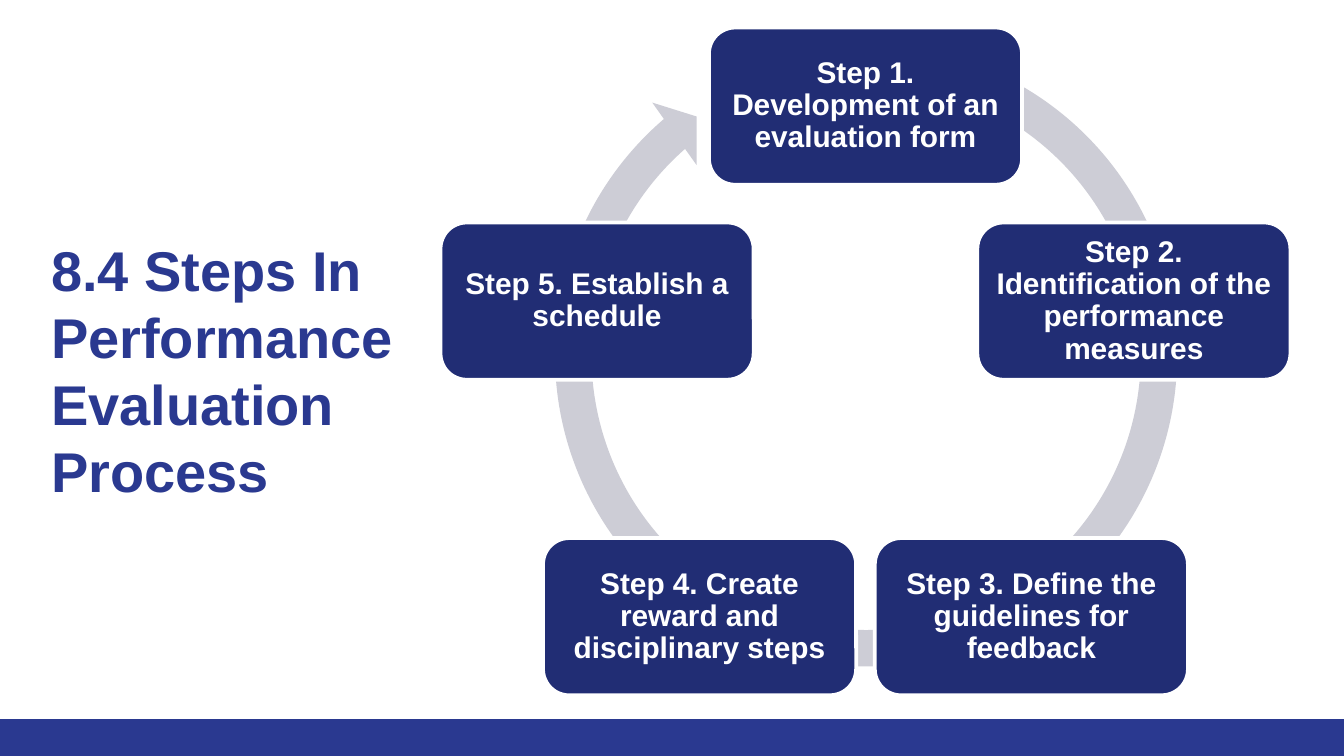
from dataclasses import dataclass
from math import cos, radians, sin

from pptx import Presentation
from pptx.dml.color import RGBColor
from pptx.enum.shapes import MSO_SHAPE
from pptx.enum.text import MSO_ANCHOR, MSO_AUTO_SIZE, PP_ALIGN
from pptx.util import Inches, Pt

BLUE, NAVY, GREY, WHITE = "2A3990", "212D74", "CDCDD6", "FFFFFF"
WIDE, HIGH = 10, 10 * 9 / 16
BAR_TOP = 5.35
MID_X, MID_Y, RADIUS = 6.44, 2.89, 2.1
BOX_W, BOX_H = 2.33, 1.17


@dataclass
class Step:
    """One box on the ring, placed by its turn in degrees from the top."""
    text: str
    turn: float


def hue(code: str) -> RGBColor:
    """Turn a hex string into a colour."""
    return RGBColor.from_string(code)


def write(shape, text: str, *, size: float, color: str, align, anchor, inset: float, space: float) -> None:
    """Put formatted bold text in a shape."""
    frame = shape.text_frame
    frame.word_wrap = True
    frame.auto_size = MSO_AUTO_SIZE.NONE
    frame.vertical_anchor = anchor
    frame.margin_left = frame.margin_right = Inches(inset)
    frame.margin_top = frame.margin_bottom = Inches(inset)
    para = frame.paragraphs[0]
    para.alignment, para.line_spacing = align, space
    run = para.add_run()
    run.text = text
    font = run.font
    font.name, font.size, font.bold = "Arial", Pt(size), True
    font.color.rgb = hue(color)


def draw(slide, kind, left: float, top: float, wide: float, high: float, fill: str):
    """Add a flat filled shape without an outline."""
    shape = slide.shapes.add_shape(kind, Inches(left), Inches(top), Inches(wide), Inches(high))
    shape.shadow.inherit = False
    shape.fill.solid()
    shape.fill.fore_color.rgb = hue(fill)
    shape.line.fill.background()
    return shape


def add_step(slide, step: Step) -> None:
    """Draw one step box on the ring."""
    turn = radians(step.turn)
    left = MID_X + RADIUS * sin(turn) - BOX_W / 2
    top = MID_Y - RADIUS * cos(turn) - BOX_H / 2
    box = draw(slide, MSO_SHAPE.ROUNDED_RECTANGLE, left, top, BOX_W, BOX_H, NAVY)
    box.line.color.rgb = hue(WHITE)
    box.line.width = Pt(2)
    write(box, step.text, size=16, color=WHITE, align=PP_ALIGN.CENTER,
          anchor=MSO_ANCHOR.MIDDLE, inset=0.07, space=0.9)


def add_title(slide, text: str) -> None:
    """Place and fill the title."""
    title = slide.shapes.title
    title.left, title.top = Inches(0.28), Inches(1.65)
    title.width, title.height = Inches(2.8), Inches(2.53)
    write(title, text, size=30, color=BLUE, align=PP_ALIGN.LEFT,
          anchor=MSO_ANCHOR.TOP, inset=0.1, space=1)


def add_ring(slide) -> None:
    """Draw the circular arrow behind the steps."""
    ring = draw(slide, MSO_SHAPE.CIRCULAR_ARROW, 3.98, 0.18, 4.93, 4.93, GREY)
    for spot, value in enumerate((0.055, 3.307, 137.48, 174.03, 0.058)):
        ring.adjustments[spot] = value


def main() -> None:
    """Build and save the slide."""
    deck = Presentation()
    deck.slide_width, deck.slide_height = Inches(WIDE), Inches(HIGH)
    slide = deck.slides.add_slide(deck.slide_layouts[5])
    draw(slide, MSO_SHAPE.RECTANGLE, 0, BAR_TOP, WIDE, HIGH - BAR_TOP, BLUE)
    add_title(slide, "8.4 Steps In Performance Evaluation Process")
    add_ring(slide)
    texts = (
        "Step 1. Development of an evaluation form",
        "Step 2. Identification of the performance measures",
        "Step 3. Define the guidelines for feedback",
        "Step 4. Create reward and disciplinary steps",
        "Step 5. Establish a schedule",
    )
    for spot, text in enumerate(texts):
        add_step(slide, Step(text, spot * 360 / len(texts)))
    deck.save("out.pptx")


if __name__ == "__main__":
    main()
